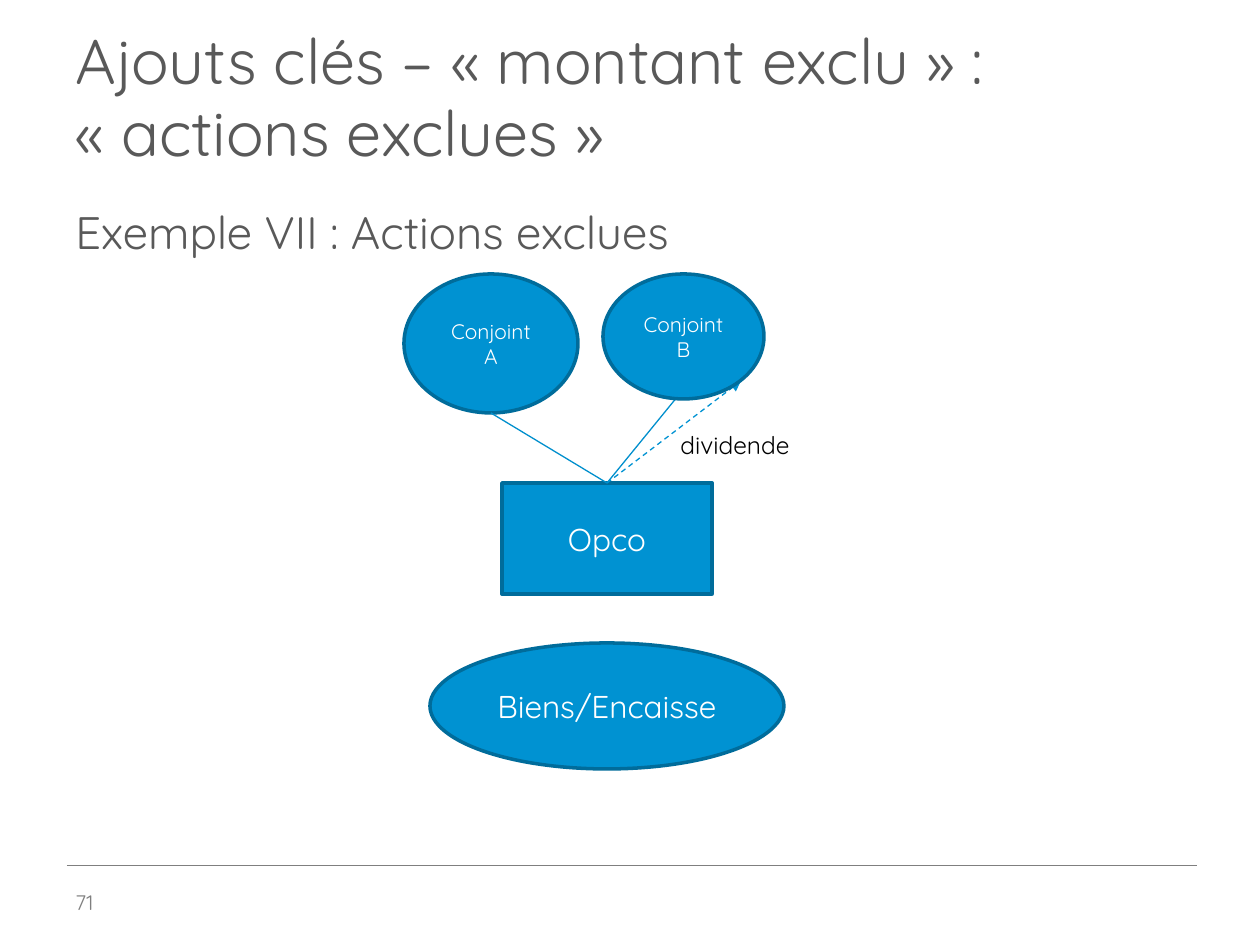
from dataclasses import dataclass

from lxml import etree
from pptx import Presentation
from pptx import util as u
from pptx.dml.color import RGBColor
from pptx.enum import dml, shapes, text
from pptx.oxml.ns import qn

PX = 914400 / 126


@dataclass(frozen=True)
class Theme:
    font: str = "Quicksand"
    heading: str = "595959"
    muted: str = "7F7F7F"
    fill: str = "0092D2"
    outline: str = "006C9B"
    link: str = "008FCD"
    light: str = "FFFFFF"
    dark: str = "000000"
    title: int = 36
    subtitle: int = 26
    entity: int = 18
    label: int = 14
    small: int = 12


T = Theme()


def px(*values):
    return [u.Emu(round(v * PX)) for v in values]


def rgb(color):
    return RGBColor.from_string(color)


def set_text(sp, words, size, color, align=text.PP_ALIGN.LEFT,
             anchor=text.MSO_ANCHOR.TOP, wrap=True):
    tf = sp.text_frame
    tf.text = words
    tf.word_wrap = wrap
    tf.vertical_anchor = anchor
    p = tf.paragraphs[0]
    p.alignment = align
    f = p.runs[0].font
    f.name, f.size, f.color.rgb = T.font, u.Pt(size), rgb(color)
    return tf


def add_text(s, box, words, size, color, **layout):
    return set_text(s.shapes.add_textbox(*px(*box)), words, size, color, **layout)


def add_node(s, kind, box, words, size):
    sp = s.shapes.add_shape(kind, *px(*box))
    sp.shadow.inherit = False
    sp.fill.solid()
    sp.fill.fore_color.rgb = rgb(T.fill)
    sp.line.color.rgb = rgb(T.outline)
    sp.line.width = u.Pt(2)
    set_text(sp, words, size, T.light, text.PP_ALIGN.CENTER, text.MSO_ANCHOR.MIDDLE)
    return sp


def add_line(s, start, end, color, width):
    cx = s.shapes.add_connector(shapes.MSO_CONNECTOR.STRAIGHT, *px(*start, *end))
    cx.line.color.rgb = rgb(color)
    cx.line.width = u.Pt(width)
    etree.SubElement(cx._element.spPr, qn("a:effectLst"))
    return cx


def heading(s, x, y, w):
    tf = add_text(s, (x, y, w, 136), "Ajouts clés – «\u00a0montant exclu\u00a0» : «\u00a0actions exclues\u00a0»".replace("\\u00a0", " "),
                  T.title, T.heading, anchor=text.MSO_ANCHOR.BOTTOM)
    tf.margin_bottom = px(3)[0]
    tf.paragraphs[0].line_spacing = 0.95
    add_text(s, (x, y + 160, w, 646), "Exemple VII : Actions exclues",
             T.subtitle, T.heading)


def ownership_diagram(s, x, y):
    oval = shapes.MSO_SHAPE.OVAL
    top = (x + 203, y + 209)
    opco = add_node(s, shapes.MSO_SHAPE.RECTANGLE, (x + 98, y + 209, 210, 111),
                    "Opco", T.entity)
    add_node(s, oval, (x, y, 174, 139), "Conjoint A", T.small)
    for start in ((x + 87, y + 139), (x + 274, y + 122)):
        add_line(s, start, top, T.link, 0.75).end_connect(opco, 0)

    dividend = add_line(s, top, (x + 337, y + 107), T.fill, 0.75)
    dividend.begin_connect(opco, 0)
    dividend.line.dash_style = dml.MSO_LINE.DASH
    etree.SubElement(dividend.line._get_or_add_ln(), qn("a:tailEnd"), type="triangle")

    add_node(s, oval, (x + 26, y + 369, 354, 126), "Biens/Encaisse", T.entity)
    add_node(s, oval, (x + 199, y, 161, 125), "Conjoint B", T.small)
    add_text(s, (x + 264, y + 150, 147, 43), "dividende", T.label, T.dark, wrap=False)


def footer(s, x, y, w):
    add_line(s, (x + 4, y), (x + w, y), T.muted, 0.25)
    add_text(s, (x, y + 12, 135, 50), "71", T.small, T.muted,
             anchor=text.MSO_ANCHOR.MIDDLE)


def main():
    prs = Presentation()
    prs.slide_width, prs.slide_height = px(1260, 945)
    s = prs.slides.add_slide(prs.slide_layouts[6])
    footer(s, 63, 865, 1134)
    heading(s, 63, 38, 1134)
    ownership_diagram(s, 404, 274)
    prs.save("out.pptx")


if __name__ == "__main__":
    main()
